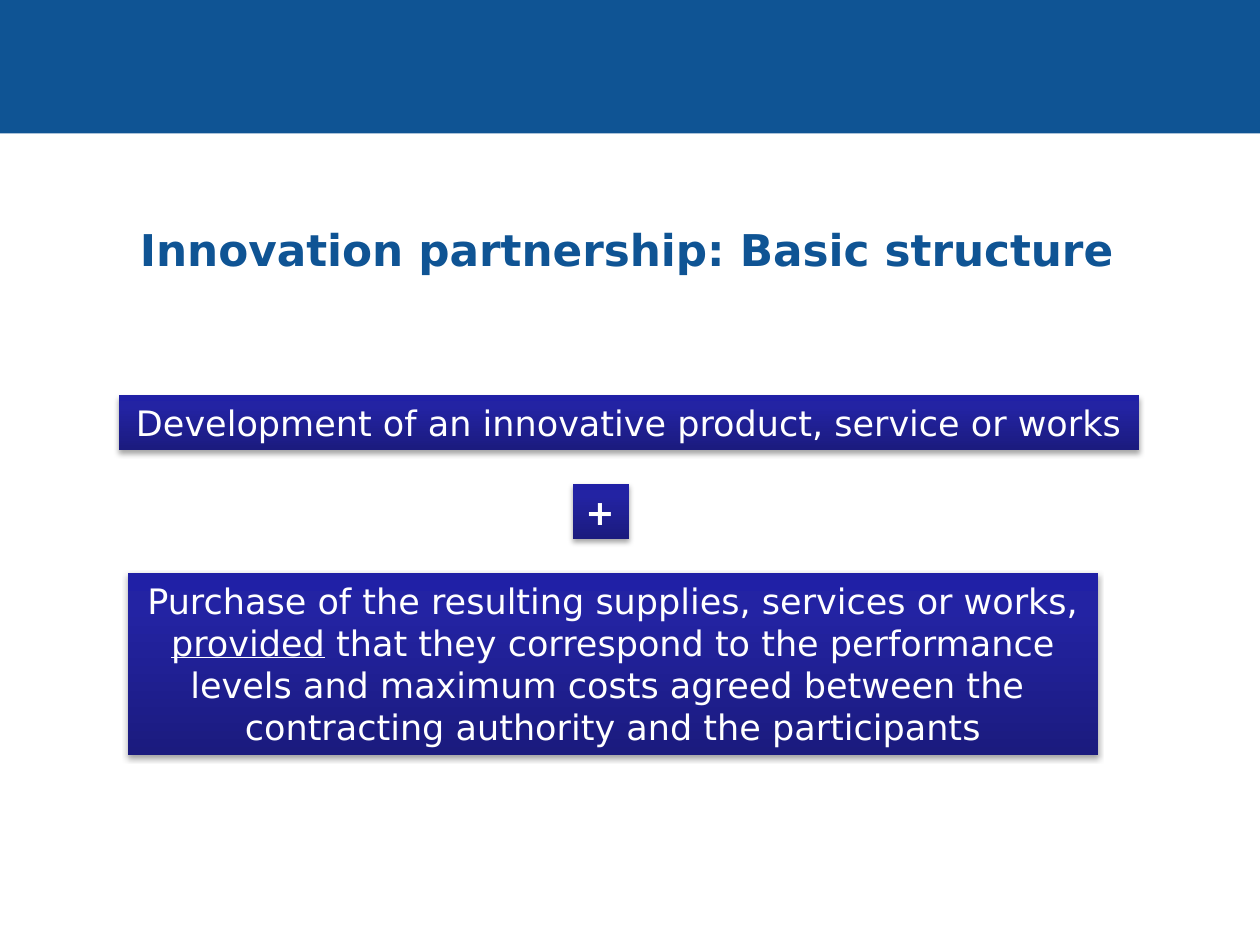
from dataclasses import dataclass

from lxml import etree
from pptx import Presentation
from pptx.dml.color import RGBColor
from pptx.enum.shapes import MSO_SHAPE
from pptx.enum.text import MSO_ANCHOR, MSO_AUTO_SIZE, PP_ALIGN
from pptx.oxml import parse_xml
from pptx.oxml.ns import nsdecls, qn
from pptx.slide import Slide
from pptx.util import Cm, Pt

RECTANGLE = MSO_SHAPE.RECTANGLE
CENTER, LEFT = PP_ALIGN.CENTER, PP_ALIGN.LEFT
MIDDLE, TOP = MSO_ANCHOR.MIDDLE, MSO_ANCHOR.TOP
GROW, NO_FIT = MSO_AUTO_SIZE.SHAPE_TO_FIT_TEXT, MSO_AUTO_SIZE.NONE

SLIDE_WIDTH, SLIDE_HEIGHT = 25.4, 19.05
FONT = "DejaVu Sans"
BLUE, WHITE = "0F5494", "FFFFFF"
GRADIENT = [(0, "1B1B7E"), (80, "2323A3"), (100, "2020A6")]
STACK_TOP, STACK_GAP = 7.97, 0.68


@dataclass
class Run:
    text: str
    underline: bool = False
    bold: bool = False


@dataclass
class Box:
    left: float
    width: float
    height: float
    lines: list[list[Run]]
    alignment: PP_ALIGN = CENTER


BOXES = [
    Box(2.4, 20.56, 1.11,
        [[Run("Development of an innovative product, service or works")]]),
    Box(11.55, 1.13, 1.11, [[Run("+", bold=True)]], LEFT),
    Box(2.58, 19.56, 3.68, [
        [Run("Purchase of the resulting supplies, services or works,")],
        [Run("provided", underline=True), Run(" that they correspond to the performance")],
        [Run("levels and maximum costs agreed between the ")],
        [Run("contracting authority and the participants")],
    ]),
]


def color(value: str) -> RGBColor:
    return RGBColor.from_string(value)


def apply_format(target, values: dict) -> None:
    for name, value in values.items():
        setattr(target, name, value)


def format_font(font, size: float, fill: str, **values) -> None:
    apply_format(font, {"name": FONT, "size": Pt(size), **values})
    font.color.rgb = color(fill)


def gradient_fill() -> etree.ElementBase:
    stops = "".join(
        f'<a:gs pos="{position * 1000}"><a:srgbClr val="{value}"/></a:gs>'
        for position, value in GRADIENT
    )
    return parse_xml(
        f'<a:gradFill {nsdecls("a")} rotWithShape="1"><a:gsLst>{stops}</a:gsLst>'
        '<a:lin ang="16200000" scaled="0"/></a:gradFill>'
    )


def soft_shadow() -> etree.ElementBase:
    return parse_xml(
        f'<a:effectLst {nsdecls("a")}>'
        f'<a:outerShdw blurRad="{Pt(3.1)}" dist="{Pt(1.8)}" dir="5400000" rotWithShape="0">'
        '<a:srgbClr val="000000"><a:alpha val="35000"/></a:srgbClr>'
        '</a:outerShdw></a:effectLst>'
    )


def add_banner(slide: Slide) -> None:
    banner = slide.shapes.add_shape(RECTANGLE, 0, 0, Cm(SLIDE_WIDTH), Cm(2.69))
    banner.shadow.inherit = False
    banner.fill.solid()
    banner.fill.fore_color.rgb = color(BLUE)
    banner.line.fill.background()


def fill_title(slide: Slide, text: str) -> None:
    title = slide.shapes.title
    apply_format(title, {"left": Cm(1.3), "top": Cm(3.73),
                         "width": Cm(22.66), "height": Cm(2.59)})
    frame = title.text_frame
    frame.text = text
    apply_format(frame, {"margin_left": 0, "margin_right": 0, "margin_top": 0,
                         "margin_bottom": 0, "vertical_anchor": MIDDLE,
                         "word_wrap": True, "auto_size": NO_FIT})
    paragraph = frame.paragraphs[0]
    paragraph.alignment = CENTER
    properties = paragraph._p.get_or_add_pPr()
    properties.set("marL", str(Cm(1)))
    properties.set("indent", str(-Cm(1)))
    format_font(paragraph.runs[0].font, 25, BLUE, bold=True)


def add_box(slide: Slide, box: Box, top: float) -> None:
    shape = slide.shapes.add_shape(
        RECTANGLE, Cm(box.left), Cm(top), Cm(box.width), Cm(box.height))
    shape.line.fill.background()
    outline = shape._element.spPr.find(qn("a:ln"))
    outline.addprevious(gradient_fill())
    outline.addnext(soft_shadow())

    frame = shape.text_frame
    apply_format(frame, {"word_wrap": False, "auto_size": GROW, "vertical_anchor": TOP})
    paragraph = frame.paragraphs[0]
    paragraph.alignment = box.alignment
    format_font(paragraph.font, 20, WHITE)
    for index, line in enumerate(box.lines):
        if index:
            paragraph.add_line_break()
        for part in line:
            run = paragraph.add_run()
            run.text = part.text
            format_font(run.font, 20, WHITE, bold=part.bold, underline=part.underline)


def main() -> None:
    presentation = Presentation()
    apply_format(presentation, {"slide_width": Cm(SLIDE_WIDTH),
                                "slide_height": Cm(SLIDE_HEIGHT)})
    slide = presentation.slides.add_slide(presentation.slide_layouts[5])
    add_banner(slide)
    fill_title(slide, "Innovation partnership: Basic structure")
    top = STACK_TOP
    for box in BOXES:
        add_box(slide, box, top)
        top += box.height + STACK_GAP
    presentation.save("out.pptx")


if __name__ == "__main__":
    main()
